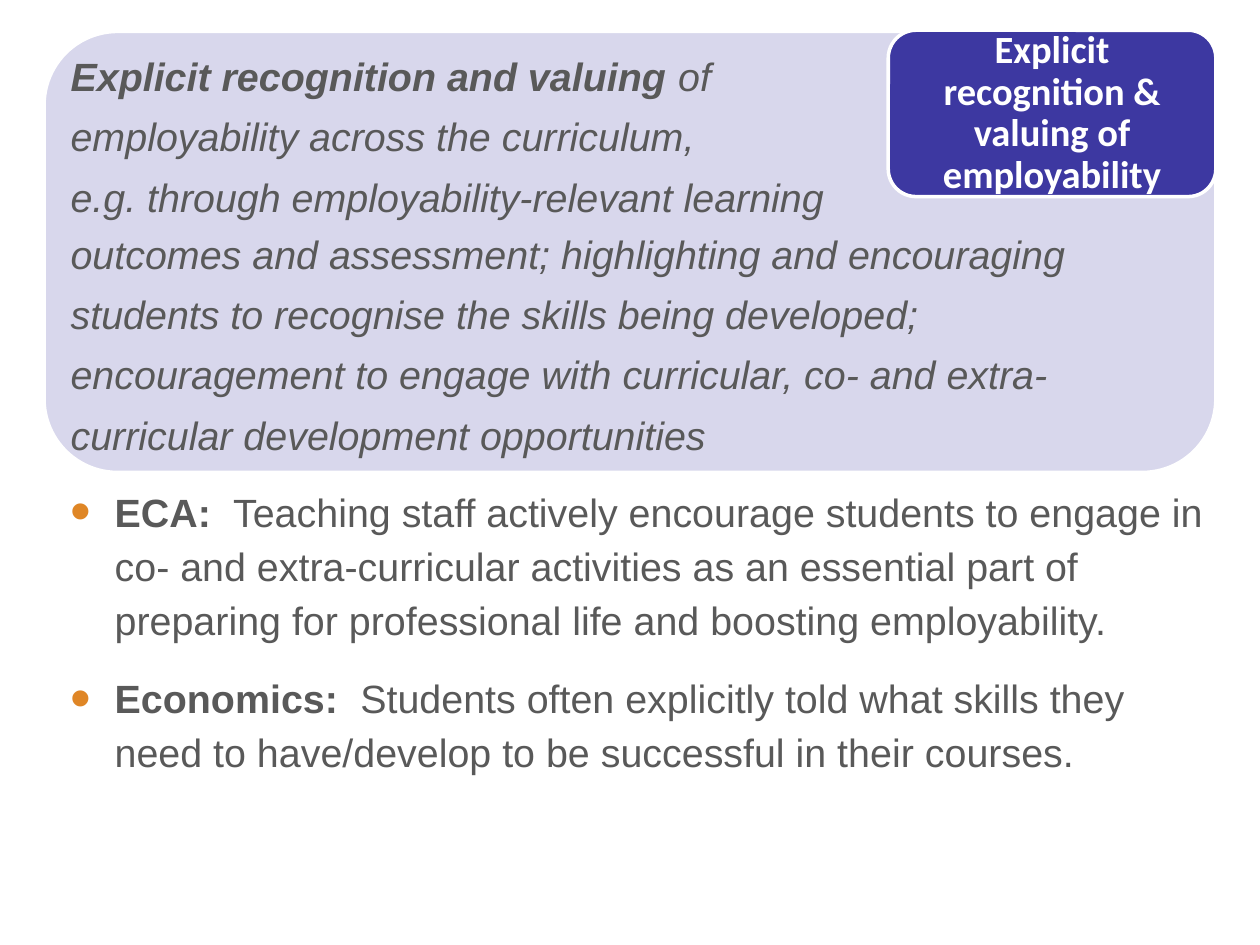
from dataclasses import dataclass

from lxml import etree
from pptx import Presentation
from pptx.dml.color import RGBColor
from pptx.enum.shapes import MSO_SHAPE
from pptx.enum.text import MSO_ANCHOR, PP_ALIGN
from pptx.oxml.ns import qn
from pptx.util import Inches, Length, Pt

ROUNDED = MSO_SHAPE.ROUNDED_RECTANGLE
TOP, MIDDLE = MSO_ANCHOR.TOP, MSO_ANCHOR.MIDDLE
CENTER = PP_ALIGN.CENTER

INDIGO = RGBColor(0x3D, 0x38, 0xA1)
WHITE = RGBColor(0xFF, 0xFF, 0xFF)
GREY = RGBColor(0x59, 0x59, 0x59)
ORANGE = RGBColor(0xDF, 0x86, 0x26)

INSET = Inches(0.07)


@dataclass
class Box:
    left: float
    top: float
    width: float
    height: float

    def lengths(self) -> tuple[Length, ...]:
        return tuple(map(Inches, (self.left, self.top, self.width, self.height)))


@dataclass
class Passage:
    lead: str  # bold opening words
    body: str


def prepare_frame(frame, anchor=TOP) -> None:
    frame.word_wrap = True
    frame.vertical_anchor = anchor
    frame.margin_left = frame.margin_right = INSET
    frame.margin_top = frame.margin_bottom = INSET


def set_font(paragraph, name: str, size: float, color: RGBColor) -> None:
    paragraph.font.name = name
    paragraph.font.size = Pt(size)
    paragraph.font.color.rgb = color


def add_panel(slide, box: Box):
    shape = slide.shapes.add_shape(ROUNDED, *box.lengths())
    shape.shadow.inherit = False
    shape.fill.solid()
    shape.fill.fore_color.rgb = INDIGO
    shape.line.color.rgb = WHITE
    shape.line.width = Pt(2)
    return shape


def set_opacity(shape, percent: int) -> None:
    color = shape.fill._xPr.find(qn("a:solidFill"))[0]
    etree.SubElement(color, qn("a:alpha"), val=str(percent * 1000))


def add_frame(slide, box: Box):
    frame = slide.shapes.add_textbox(*box.lengths()).text_frame
    prepare_frame(frame)
    return frame


def add_runs(paragraph, passage: Passage) -> None:
    for text, bold in ((passage.lead, True), (passage.body, False)):
        if text:
            for index, line in enumerate(text.split("\n")):
                if index:
                    paragraph.add_line_break()
                run = paragraph.add_run()
                run.text = line
                run.font.bold = bold


def add_definition(slide, box: Box, passage: Passage) -> None:
    paragraph = add_frame(slide, box).paragraphs[0]
    paragraph.line_spacing = Pt(34.5)
    paragraph.space_before = Pt(14.1)
    paragraph._p.get_or_add_pPr().set("marL", str(Inches(0.2)))
    set_font(paragraph, "Arial", 22.5, GREY)
    paragraph.font.italic = True
    add_runs(paragraph, passage)


def set_bullet(paragraph) -> None:
    properties = paragraph._p.get_or_add_pPr()
    properties.set("marL", str(Inches(0.55)))
    properties.set("indent", str(Inches(-0.35)))
    color = etree.SubElement(properties, qn("a:buClr"))
    etree.SubElement(color, qn("a:srgbClr"), val=str(ORANGE))
    etree.SubElement(properties, qn("a:buSzPct"), val="150000")
    etree.SubElement(properties, qn("a:buFont"), typeface="Arial")
    etree.SubElement(properties, qn("a:buChar"), char="•")


def add_examples(slide, box: Box, passages: list[Passage]) -> None:
    frame = add_frame(slide, box)
    for index, passage in enumerate(passages):
        paragraph = frame.add_paragraph() if index else frame.paragraphs[0]
        paragraph.line_spacing = 1.14
        paragraph.space_before = Pt(14)
        set_bullet(paragraph)
        set_font(paragraph, "Arial", 22.5, GREY)
        add_runs(paragraph, passage)


def add_label(slide, box: Box, text: str) -> None:
    frame = add_panel(slide, box).text_frame
    prepare_frame(frame, MIDDLE)
    paragraph = frame.paragraphs[0]
    paragraph.text = text
    paragraph.alignment = CENTER
    paragraph.line_spacing = 0.9
    set_font(paragraph, "Calibri", 22, WHITE)
    paragraph.font.bold = True


DEFINITION_START = Passage(
    "Explicit recognition and valuing",
    " of employability across the curriculum, \n"
    "e.g. through employability-relevant learning",
)
DEFINITION_END = Passage(
    "",
    "outcomes and assessment; highlighting and encouraging students to "
    "recognise the skills being developed; encouragement to engage with "
    "curricular, co- and extra-curricular development opportunities",
)
EXAMPLES = [
    Passage(
        "ECA:  ",
        "Teaching staff actively encourage students to engage in co- and "
        "extra-curricular activities as an essential part of preparing for "
        "professional life and boosting employability.",
    ),
    Passage(
        "Economics:  ",
        "Students often explicitly told what skills they need to "
        "have/develop to be successful in their courses.",
    ),
]


def main() -> None:
    presentation = Presentation()
    presentation.slide_width = Inches(10)
    presentation.slide_height = Inches(7.5)
    slide = presentation.slides.add_slide(presentation.slide_layouts[6])

    # Tinted panel with the first part of the definition
    set_opacity(add_panel(slide, Box(0.35, 0.25, 9.3, 3.5)), 20)
    add_definition(slide, Box(0.29, 0.24, 6.82, 1.32), DEFINITION_START)

    # Examples from departments
    add_examples(slide, Box(0.29, 3.75, 9.44, 2.76), EXAMPLES)

    # Corner label, and the definition running on below it
    add_label(slide, Box(7.05, 0.24, 2.6, 1.32),
              "Explicit recognition & valuing of employability")
    add_definition(slide, Box(0.29, 1.65, 9.31, 1.32), DEFINITION_END)

    presentation.save("out.pptx")


if __name__ == "__main__":
    main()
